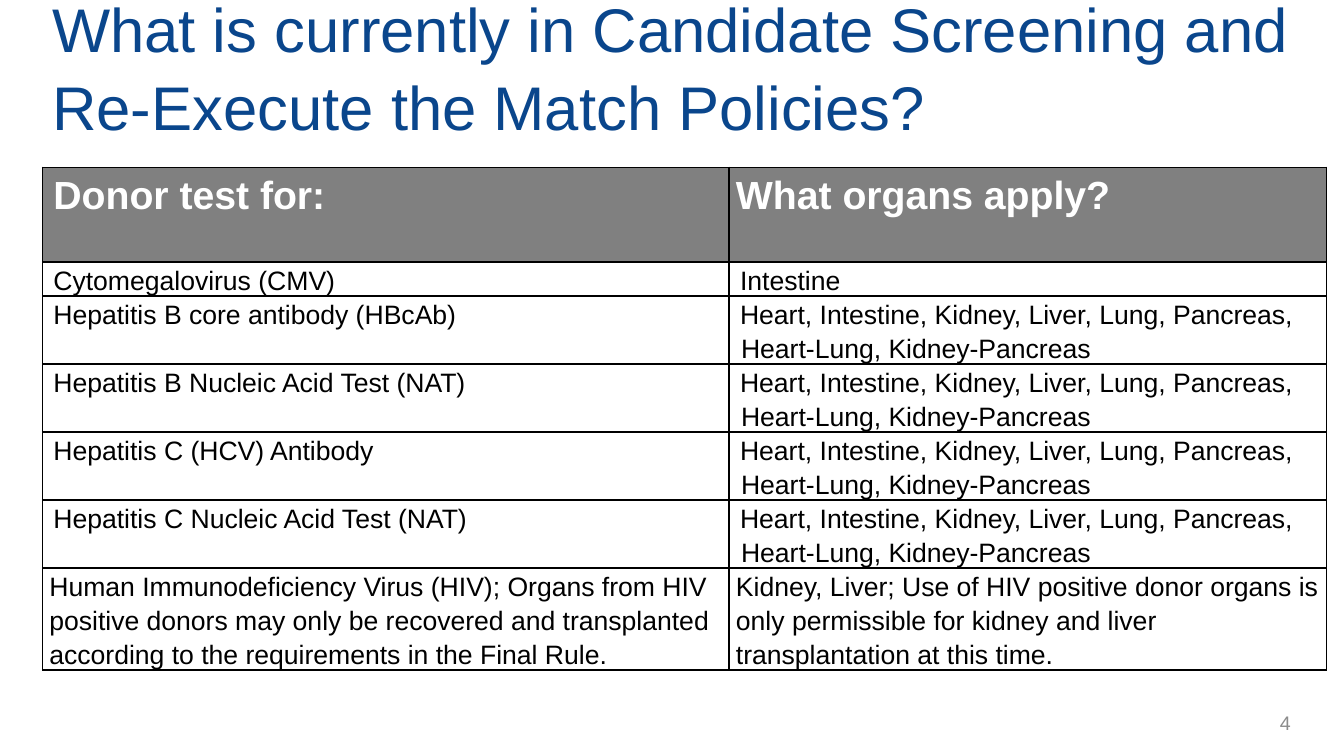
from dataclasses import dataclass

from lxml import etree
from pptx import Presentation
from pptx.dml.color import RGBColor
from pptx.enum.text import MSO_ANCHOR, PP_ALIGN
from pptx.oxml.ns import qn
from pptx.util import Inches, Pt

MIDDLE = MSO_ANCHOR.MIDDLE
LEFT, RIGHT = PP_ALIGN.LEFT, PP_ALIGN.RIGHT
FONT = "Arial"
COLORS = {
    "title": "0A468C",
    "header": "808080",
    "header_text": "FFFFFF",
    "body": "FFFFFF",
    "text": "000000",
    "border": "000000",
    "number": "8C8C8C",
}
ALL_ORGANS = "Heart, Intestine, Kidney, Liver, Lung, Pancreas, Heart-Lung, Kidney-Pancreas"


@dataclass
class Label:
    text: str
    left: float
    top: float
    width: float
    height: float
    size: int
    color: str
    align: PP_ALIGN = LEFT
    spacing: float = 1.0


@dataclass
class DonorTest:
    test: str
    organs: str
    height: float = 0.57
    indents: tuple[bool, bool] = (True, True)
    space_after: int = 2
    size: int = 19
    bold: bool = False
    fill: str = "body"
    color: str = "text"


LABELS = [
    Label("What is currently in Candidate Screening and Re-Execute the Match Policies?",
          0.42, 0.18, 12.74, 0.93, 44, "title", spacing=1.06),
    Label("4", 10.64, 6.97, 2.26, 0.4, 14, "number", RIGHT),
]
COLUMN_WIDTHS = [6.81, 5.93]
ROWS = [
    DonorTest("Donor test for:", "What organs apply?", 0.94, (True, False), 0, 28, True,
              "header", "header_text"),
    DonorTest("Cytomegalovirus (CMV)", "Intestine", 0.29),
    DonorTest("Hepatitis B core antibody (HBcAb)", ALL_ORGANS),
    DonorTest("Hepatitis B Nucleic Acid Test (NAT)", ALL_ORGANS),
    DonorTest("Hepatitis C (HCV) Antibody", ALL_ORGANS),
    DonorTest("Hepatitis C Nucleic Acid Test (NAT)", ALL_ORGANS),
    DonorTest(
        "Human Immunodeficiency Virus (HIV); Organs from HIV positive donors may only be "
        "recovered and transplanted according to the requirements in the Final Rule.",
        "Kidney, Liver; Use of HIV positive donor organs is only permissible for kidney "
        "and liver transplantation at this time.",
        indents=(False, False), space_after=6),
]


def set_all(target, values: dict) -> None:
    for name, value in values.items():
        setattr(target, name, value)


def write(p, text: str, size: int, color: str, bold: bool = False) -> None:
    r = p.add_run()
    r.text = text
    set_all(r.font, {"name": FONT, "size": Pt(size), "bold": bold})
    r.font.color.rgb = RGBColor.from_string(COLORS[color])


def add_label(s, label: Label) -> None:
    sp = s.shapes.add_textbox(Inches(label.left), Inches(label.top),
                              Inches(label.width), Inches(label.height))
    tf = sp.text_frame
    set_all(tf, {"word_wrap": True, "vertical_anchor": MIDDLE})
    p = tf.paragraphs[0]
    set_all(p, {"alignment": label.align, "line_spacing": label.spacing})
    write(p, label.text, label.size, label.color)


def add_borders(cell) -> None:
    tc_pr = cell._tc.get_or_add_tcPr()
    for i, side in enumerate(("lnL", "lnR", "lnT", "lnB")):
        ln = etree.Element(qn(f"a:{side}"), w=str(Pt(1)))
        fill = etree.SubElement(ln, qn("a:solidFill"))
        etree.SubElement(fill, qn("a:srgbClr"), val=COLORS["border"])
        tc_pr.insert(i, ln)


def fill_cell(cell, text: str, row: DonorTest, indent: bool) -> None:
    set_all(cell, {"margin_left": Inches(0.07), "margin_right": Inches(0.07),
                   "margin_top": 0, "margin_bottom": 0})
    cell.fill.solid()
    cell.fill.fore_color.rgb = RGBColor.from_string(COLORS[row.fill])
    add_borders(cell)
    p = cell.text_frame.paragraphs[0]
    set_all(p, {"line_spacing": 1.15, "space_after": Pt(row.space_after)})
    if indent:
        p_pr = p._p.get_or_add_pPr()
        p_pr.set("marL", str(Inches(0.05)))
        p_pr.set("indent", str(Inches(-0.01)))
    write(p, text, row.size, row.color, row.bold)


def add_donor_table(s, rows: list[DonorTest]) -> None:
    table = s.shapes.add_table(
        len(rows), len(COLUMN_WIDTHS), Inches(0.42), Inches(1.66),
        Inches(sum(COLUMN_WIDTHS)), Inches(sum(row.height for row in rows))).table
    for column, width in zip(table.columns, COLUMN_WIDTHS):
        column.width = Inches(width)
    for i, row in enumerate(rows):
        table.rows[i].height = Inches(row.height)
        for j, text in enumerate((row.test, row.organs)):
            fill_cell(table.cell(i, j), text, row, row.indents[j])


def main() -> None:
    prs = Presentation()
    set_all(prs, {"slide_width": Inches(13.33), "slide_height": Inches(7.5)})
    s = prs.slides.add_slide(prs.slide_layouts[6])
    add_donor_table(s, ROWS)
    for label in LABELS:
        add_label(s, label)
    prs.save("out.pptx")


if __name__ == "__main__":
    main()
